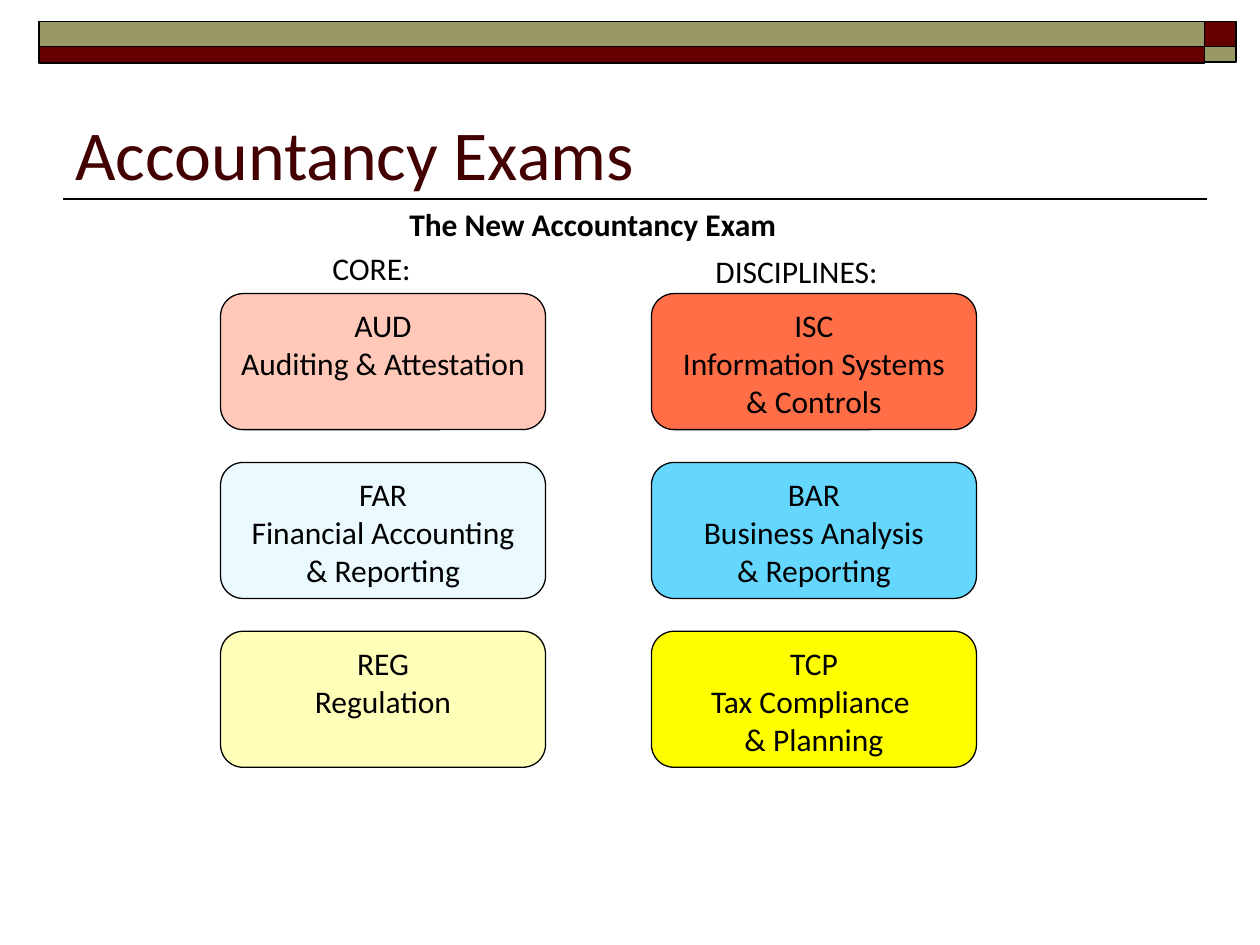
from pptx import Presentation
from pptx.dml.color import RGBColor
from pptx.enum.shapes import MSO_CONNECTOR, MSO_SHAPE
from pptx.enum.text import MSO_ANCHOR, PP_ALIGN
from pptx.oxml.ns import qn
from pptx.util import Inches, Pt
from lxml.etree import SubElement

BLACK = RGBColor(0x00, 0x00, 0x00)
MAROON = RGBColor(0x66, 0x00, 0x00)
OLIVE = RGBColor(0x99, 0x99, 0x66)
WINE = RGBColor(0x42, 0x00, 0x00)
PINK = RGBColor(0xFF, 0xC8, 0xB9)
ICE = RGBColor(0xEB, 0xFA, 0xFF)
CREAM = RGBColor(0xFF, 0xFF, 0xB9)
CORAL = RGBColor(0xFF, 0x6E, 0x47)
SKY = RGBColor(0x65, 0xD7, 0xFF)
YELLOW = RGBColor(0xFF, 0xFE, 0x00)

BANDS = [
    (9.56, 0.17, 0.25, 0.2, MAROON),
    (0.31, 0.17, 9.25, 0.2, OLIVE),
    (0.31, 0.37, 9.25, 0.13, MAROON),
    (9.56, 0.37, 0.25, 0.12, OLIVE),
]
CORE = [
    (PINK, ["AUD", "Auditing & Attestation"]),
    (ICE, ["FAR", "Financial Accounting & Reporting"]),
    (CREAM, ["REG", "Regulation"]),
]
DISCIPLINES = [
    (CORAL, ["ISC", "Information Systems & Controls"]),
    (SKY, ["BAR", "Business Analysis", "& Reporting"]),
    (YELLOW, ["TCP", "Tax Compliance ", "& Planning"]),
]
TOP, STEP = 2.33, 1.34


def write(frame, lines, size=18, color=BLACK, bold=False, align=PP_ALIGN.LEFT):
    for i, line in enumerate(lines):
        para = frame.paragraphs[0] if i == 0 else frame.add_paragraph()
        para.text = line
        para.alignment = align
        para.font.name = "Calibri"
        para.font.size = Pt(size)
        para.font.bold = bold
        para.font.color.rgb = color


def add_block(slide, kind, left, top, width, height, fill, weight):
    block = slide.shapes.add_shape(
        kind, Inches(left), Inches(top), Inches(width), Inches(height))
    block.shadow.inherit = False
    block.fill.solid()
    block.fill.fore_color.rgb = fill
    block.line.color.rgb = BLACK
    block.line.width = Pt(weight)
    return block


def add_rule(slide, left, right, top):
    rule = slide.shapes.add_connector(
        MSO_CONNECTOR.STRAIGHT, Inches(left), Inches(top), Inches(right), Inches(top))
    rule.line.color.rgb = BLACK
    rule.line.width = Pt(1)
    SubElement(rule.element.spPr, qn("a:effectLst"))


def add_label(slide, text, left, top, width, height=0.4, wrap=False,
              anchor=MSO_ANCHOR.TOP, **style):
    label = slide.shapes.add_textbox(
        Inches(left), Inches(top), Inches(width), Inches(height))
    frame = label.text_frame
    frame.word_wrap = wrap
    frame.vertical_anchor = anchor
    write(frame, [text], **style)


def add_exams(slide, left, exams):
    for row, (fill, lines) in enumerate(exams):
        card = add_block(slide, MSO_SHAPE.ROUNDED_RECTANGLE,
                         left, TOP + row * STEP, 2.58, 1.08, fill, 0.75)
        card.text_frame.word_wrap = True
        card.text_frame.vertical_anchor = MSO_ANCHOR.TOP
        write(card.text_frame, lines, align=PP_ALIGN.CENTER)


def main():
    deck = Presentation()
    deck.slide_width = Inches(10)
    deck.slide_height = Inches(7.5)
    slide = deck.slides.add_slide(deck.slide_layouts[6])
    add_rule(slide, 0.5, 9.58, 1.58)
    for *place, fill in BANDS:
        add_block(slide, MSO_SHAPE.RECTANGLE, *place, fill, 1)
    add_label(slide, "Accountancy Exams", 0.5, 0.67, 9, 0.92, wrap=True,
              anchor=MSO_ANCHOR.BOTTOM, size=40, color=WINE)
    add_exams(slide, 1.75, CORE)
    add_exams(slide, 5.17, DISCIPLINES)
    add_label(slide, "The New Accountancy Exam", 3.15, 1.58, 3.25, bold=True)
    add_label(slide, "CORE:", 2.54, 1.93, 0.83)
    add_label(slide, "DISCIPLINES:", 5.58, 1.95, 1.5)
    deck.save("out.pptx")


if __name__ == "__main__":
    main()
